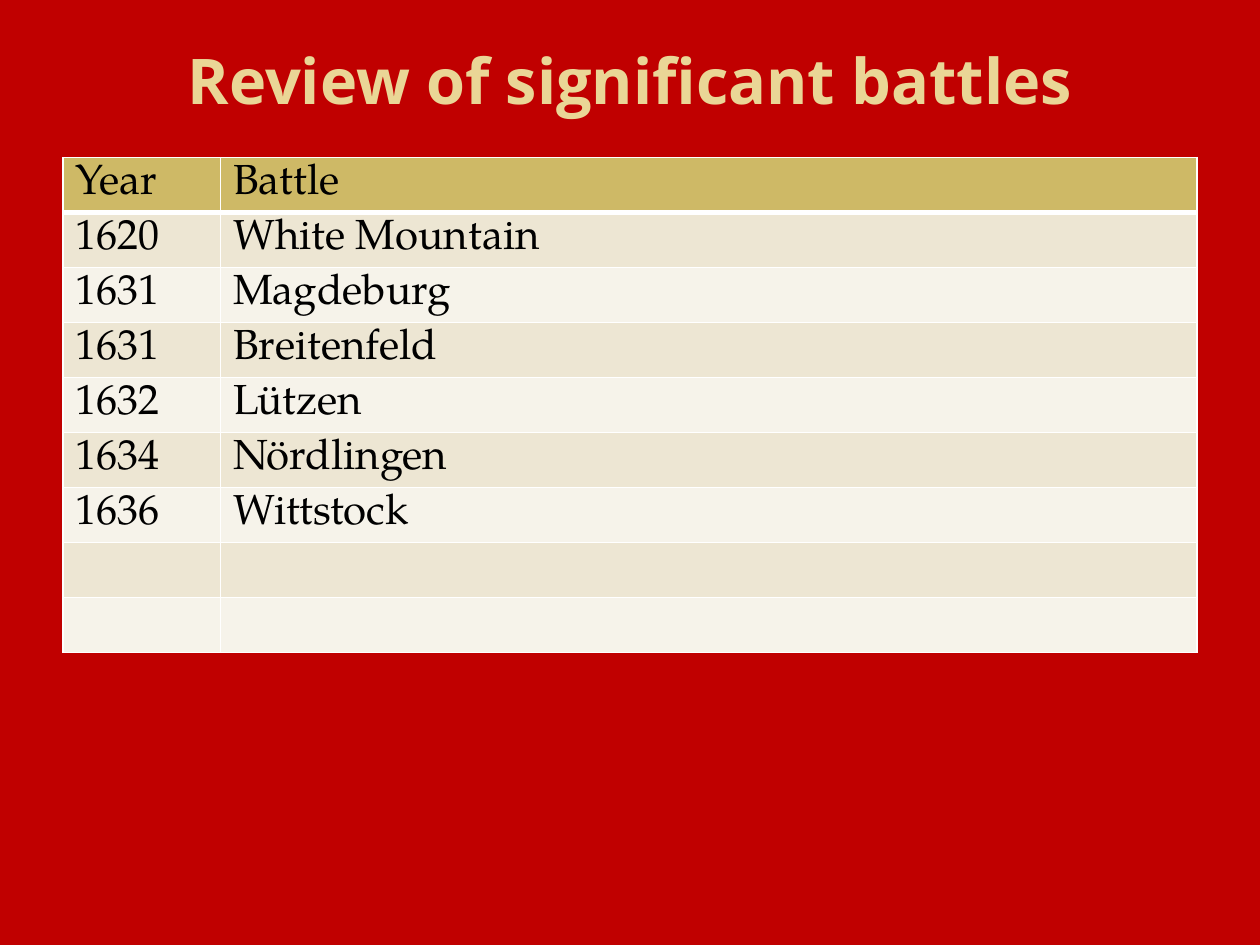
from lxml.etree import SubElement
from pptx import Presentation
from pptx.dml.color import RGBColor
from pptx.enum.text import MSO_ANCHOR, PP_ALIGN
from pptx.oxml.ns import qn
from pptx.util import Inches, Pt

TITLE = "Review of significant battles"
ROWS = [
    ("Year", "Battle"),
    ("1620", "White Mountain"),
    ("1631", "Magdeburg"),
    ("1631", "Breitenfeld"),
    ("1632", "Lützen"),
    ("1634", "Nördlingen"),
    ("1636", "Wittstock"),
    ("", ""),
    ("", ""),
]
COLS = (1.25, 7.75)
HEAD, BANDS = "CEB966", ("F6F3EA", "EDE6D3")
LEFT, TOP, WIDTH, HIGH = 0.5, 1.25, sum(COLS), 3.93


def paint(fill, tone):
    fill.solid()
    fill.fore_color.rgb = RGBColor.from_string(tone)


def style(para, name, size, tone, bold=False):
    font = para.font
    font.name, font.size, font.bold = name, Pt(size), bold
    paint(font.fill, tone)


def edge(cell, side, points):
    """Draw one white border; side is L, R, T or B."""
    line = SubElement(cell._tc.get_or_add_tcPr(), qn("a:ln" + side), w=str(Pt(points)))
    fill = SubElement(line, qn("a:solidFill"))
    SubElement(fill, qn("a:srgbClr"), val="FFFFFF")


def add_title(slide):
    title = slide.shapes.title
    title.left, title.top = Inches(LEFT), Inches(0.17)
    title.width, title.height = Inches(WIDTH), Inches(0.92)
    frame = title.text_frame
    frame.text = TITLE
    frame.vertical_anchor = MSO_ANCHOR.MIDDLE
    para = frame.paragraphs[0]
    para.alignment = PP_ALIGN.CENTER
    style(para, "Open Sans", 36, "EAD696", bold=True)


def add_battles(slide):
    box = (Inches(n) for n in (LEFT, TOP, WIDTH, HIGH))
    table = slide.shapes.add_table(len(ROWS), len(COLS), *box).table
    for col, width in zip(table.columns, COLS):
        col.width = Inches(width)
    for r, row in enumerate(ROWS):
        for c, text in enumerate(row):
            cell = table.cell(r, c)
            cell.text = text
            style(cell.text_frame.paragraphs[0], "TeX Gyre Pagella", 24, "000000")
            for side in "LRTB":
                edge(cell, side, 3 if r == 0 and side == "B" else 1)
            paint(cell.fill, BANDS[r % 2] if r else HEAD)


def main():
    deck = Presentation()
    deck.slide_width, deck.slide_height = Inches(10), Inches(7.5)
    slide = deck.slides.add_slide(deck.slide_layouts[5])
    paint(slide.background.fill, "C00000")
    add_title(slide)
    add_battles(slide)
    deck.save("out.pptx")


if __name__ == "__main__":
    main()
